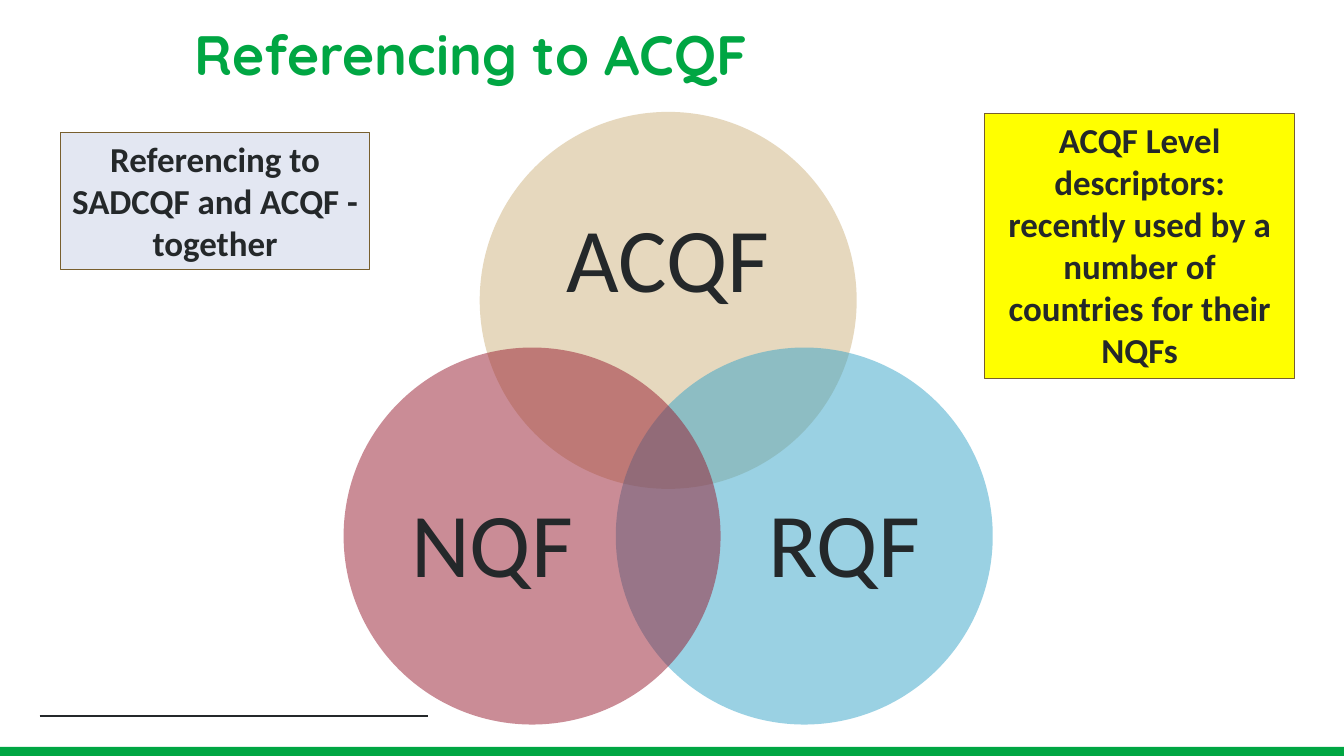
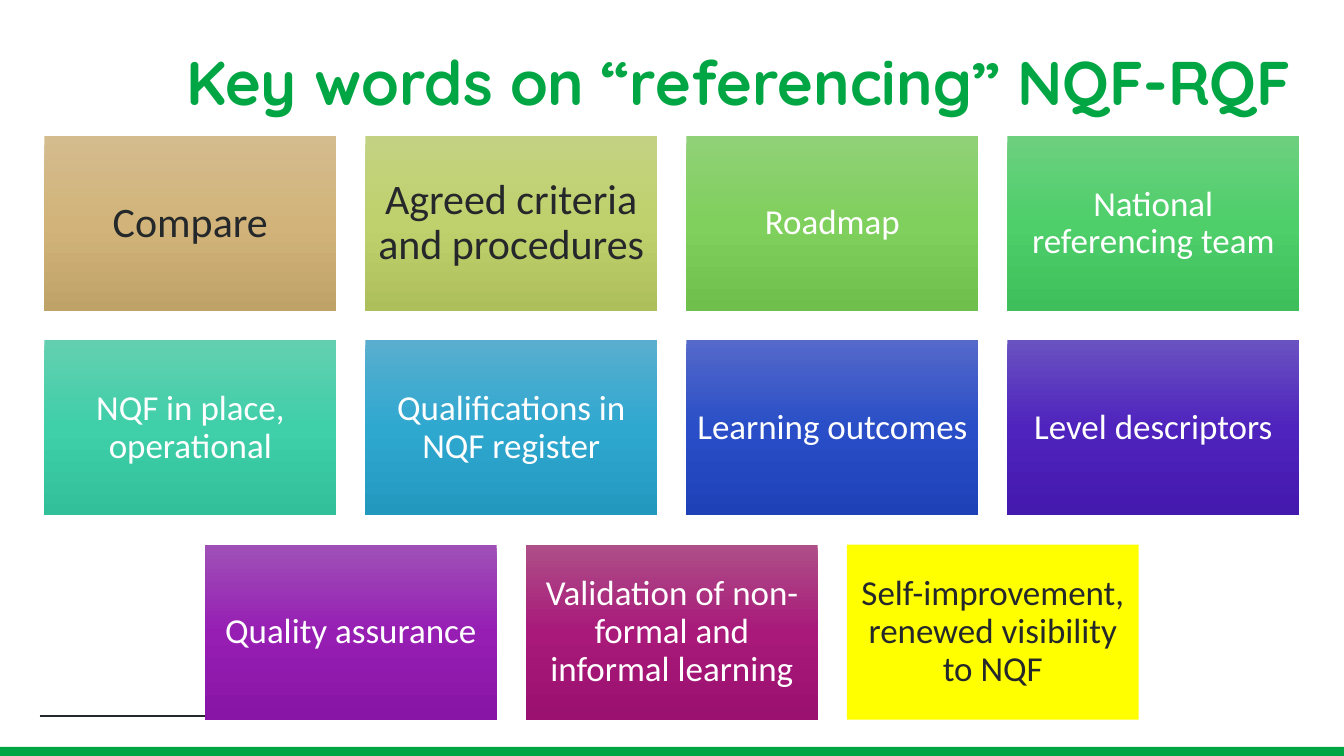
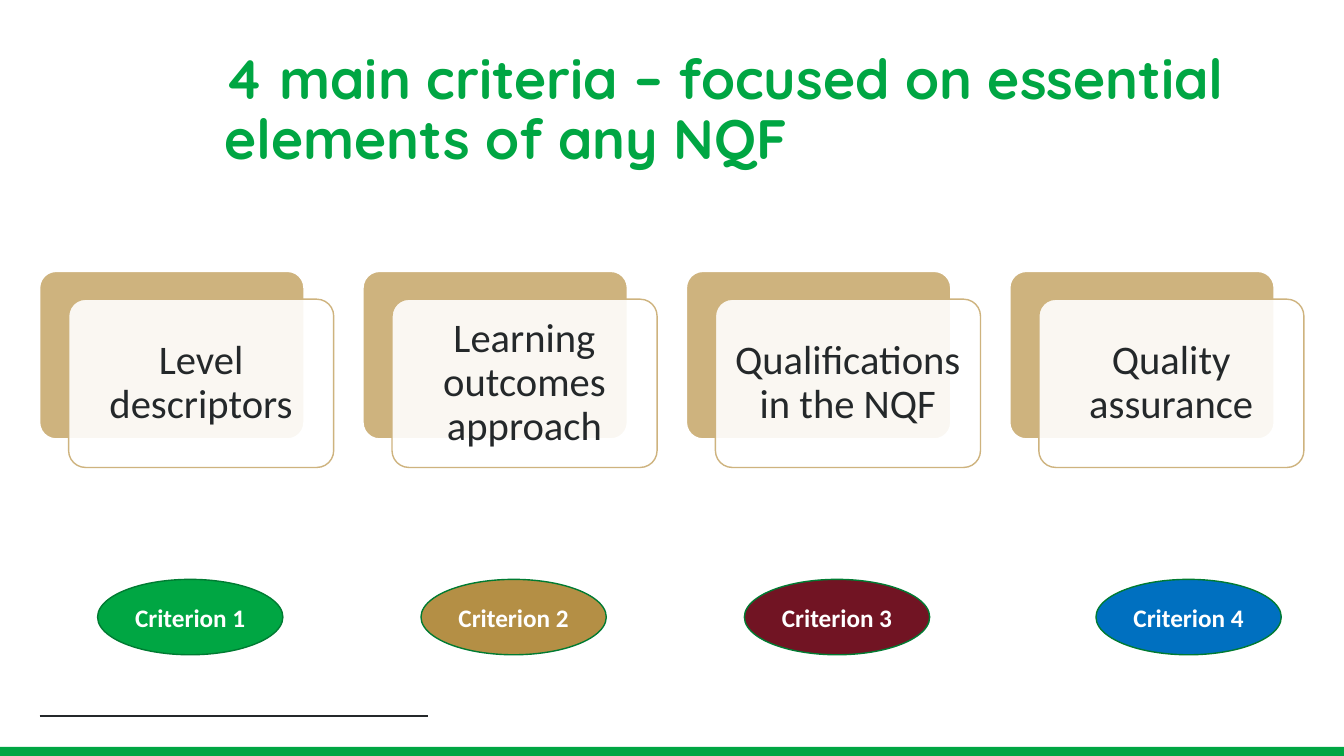
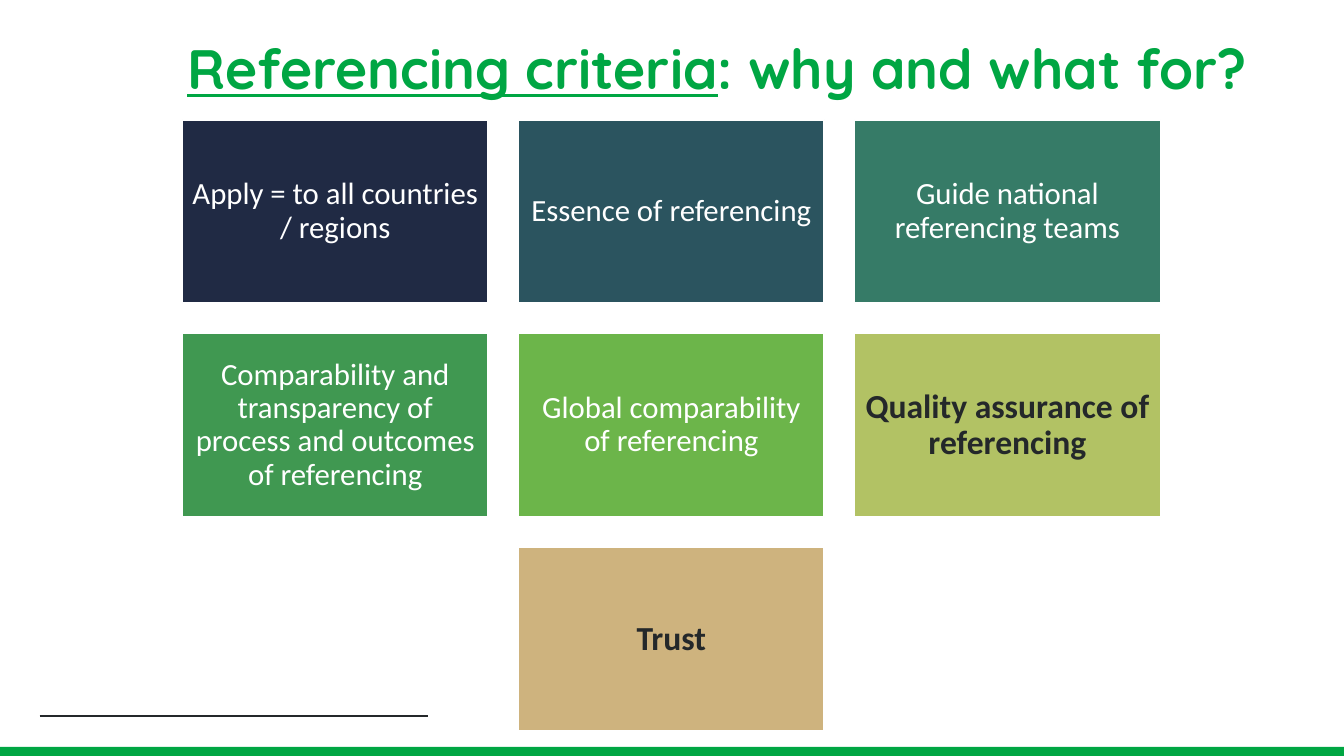
"""Build four slides on referencing qualifications frameworks."""
from copy import deepcopy
from dataclasses import dataclass

from lxml import etree
from pptx import Presentation
from pptx import util as u
from pptx.dml.color import RGBColor
from pptx.enum import shapes, text
from pptx.oxml import ns

WIDTH, HEIGHT = 33.87, 19.05
BODY_FONT, TITLE_FONT = "Calibri", "Quicksand"

COLOURS = {
    "green": "00A643", "dark green": "007B32", "ink": "24282A", "white": "FFFFFF",
    "sand": "CEB37E", "sky": "36A4C9", "wine": "971B2F", "yellow": "FFFF00",
    "mist": "E3E7F2", "brown": "785F2E", "ochre": "B48F45", "claret": "711423",
    "blue": "0070C0", "navy": "202A44", "petrol": "2B545F", "teal": "367B67",
    "fern": "409851", "leaf": "6CB54A", "olive": "B2C264",
}

GRADIENTS = {
    "tan": ("D4BC8E", "D2B47A", "BFA268"),
    "lime": ("C3D282", "BFD16C", "ADBF5A"),
    "grass": ("90D177", "80D05D", "6FBF4D"),
    "emerald": ("6CD07F", "4ECF6A", "3FBF5B"),
    "mint": ("62D0B0", "3FCFA9", "31C099"),
    "azure": ("59AECF", "2FA8D0", "2398BF"),
    "royal": ("5569CA", "294EC7", "1E41B7"),
    "indigo": ("6952C1", "4F23BD", "4419AE"),
    "purple": ("9F50B7", "961EB3", "8815A5"),
    "magenta": ("AE4F88", "A8197A", "9B116F"),
}


@dataclass
class Tile:
    """One labelled rectangle of a grid."""
    label: str
    fill: str
    size: int
    ink: str = "white"
    bold: bool = False


def rgb(name):
    """Look up a named colour."""
    return RGBColor.from_string(COLOURS[name])


def lengths(*values):
    """Turn centimetres into slide lengths."""
    return [u.Cm(value) for value in values]


def fill_gradient(shape, stops):
    """Fill a shape from top to bottom with evenly spaced colours."""
    shape.fill.gradient()
    shape.fill.gradient_angle = 270
    stop_list = shape._element.spPr.find(".//" + ns.qn("a:gsLst"))
    while len(stop_list) < len(stops):
        stop_list.append(deepcopy(stop_list[-1]))
    for index, (stop, colour) in enumerate(zip(shape.fill.gradient_stops, stops)):
        stop.position = index / (len(stops) - 1)
        stop.color.rgb = RGBColor.from_string(colour)


def add_figure(page, kind, box, fill, line=None, weight=1, opacity=100):
    """Draw a preset shape with its fill and outline."""
    figure = page.shapes.add_shape(kind, *lengths(*box))
    figure.shadow.inherit = False
    if fill in GRADIENTS:
        fill_gradient(figure, GRADIENTS[fill])
    else:
        figure.fill.solid()
        figure.fill.fore_color.rgb = rgb(fill)
    if opacity < 100:
        colour = figure._element.spPr.find(".//" + ns.qn("a:srgbClr"))
        etree.SubElement(colour, ns.qn("a:alpha"), val=str(opacity * 1000))
    if line:
        figure.line.color.rgb = rgb(line)
        figure.line.width = u.Pt(weight)
    else:
        figure.line.fill.background()
    return figure


def write(shape, words, size, ink="ink", bold=False, spacing=0.9, margin=None,
          anchor=text.MSO_ANCHOR.MIDDLE, align=text.PP_ALIGN.CENTER, font=BODY_FONT):
    """Set one paragraph in a shape and return it."""
    frame = shape.text_frame
    frame.word_wrap = True
    frame.vertical_anchor = anchor
    if margin is not None:
        frame.margin_left = frame.margin_right = u.Cm(margin)
        frame.margin_top = frame.margin_bottom = u.Cm(margin)
    frame.text = words
    para = frame.paragraphs[0]
    para.alignment = align
    para.line_spacing = spacing
    style_span(para.runs[0], size, ink, bold, font)
    return para


def style_span(span, size, ink, bold, font):
    """Format one run."""
    span.font.name = font
    span.font.size = u.Pt(size)
    span.font.bold = bold
    span.font.color.rgb = rgb(ink)


def add_page(deck):
    """Add a blank page with the footer rule and band."""
    page = deck.slides.add_slide(deck.slide_layouts[6])
    band_top = 18.82
    add_figure(page, shapes.MSO_SHAPE.RECTANGLE,
               (0, band_top, WIDTH, HEIGHT - band_top), "green")
    rule = page.shapes.add_connector(shapes.MSO_CONNECTOR.STRAIGHT,
                                     *lengths(1, 18.05, 10.78, 18.05))
    rule.line.color.rgb = rgb("ink")
    rule.line.width = u.Pt(1.5)
    etree.SubElement(rule._element.spPr, ns.qn("a:effectLst"))
    return page


def add_title(page, box, words, size=39.6, rest=""):
    """Write the title; with a rest, the words before it are underlined."""
    holder = page.shapes.add_textbox(*lengths(*box))
    para = write(holder, words, size, "green", True,
                 align=text.PP_ALIGN.LEFT, font=TITLE_FONT)
    if rest:
        para.runs[0].font.underline = True
        span = para.add_run()
        span.text = rest
        style_span(span, size, "green", True, TITLE_FONT)


def add_venn(page, left, top, diameter):
    """Draw three overlapping circles, each with its label area."""
    step, drop = 0.361 * diameter, 0.625 * diameter
    upper, right, lower = (0.133, 0.175, 0.733, 0.45), (0.306, 0.258, 0.6, 0.55), \
        (0.094, 0.258, 0.6, 0.55)
    circles = (("ACQF", "sand", step, 0, upper),
               ("RQF", "sky", 2 * step, drop, right),
               ("NQF", "wine", 0, drop, lower))
    for label, fill, across, down, area in circles:
        x, y = left + across, top + down
        add_figure(page, shapes.MSO_SHAPE.OVAL, (x, y, diameter, diameter), fill, opacity=50)
        dx, dy, width, height = (part * diameter for part in area)
        holder = page.shapes.add_textbox(*lengths(x + dx, y + dy, width, height))
        write(holder, label, 65, margin=0)


def add_callout(page, box, words, fill):
    """Draw a bordered note."""
    note = add_figure(page, shapes.MSO_SHAPE.RECTANGLE, box, fill, "brown", 0.75)
    write(note, words, 25, bold=True, spacing=1, anchor=text.MSO_ANCHOR.TOP)


def add_tile_grid(page, left, top, width, columns, tiles, line=None):
    """Lay tiles out in rows, centring a row that is not full."""
    tile_width = width / (columns + 0.1 * (columns - 1))
    tile_height, gap = 0.6 * tile_width, 0.1 * tile_width
    for start in range(0, len(tiles), columns):
        row = tiles[start:start + columns]
        indent = (columns - len(row)) * (tile_width + gap) / 2
        y = top + start // columns * (tile_height + gap)
        for column, tile in enumerate(row):
            x = left + indent + column * (tile_width + gap)
            figure = add_figure(page, shapes.MSO_SHAPE.RECTANGLE,
                                (x, y, tile_width, tile_height), tile.fill, line)
            write(figure, tile.label, tile.size, tile.ink, tile.bold, margin=tile.size / 100)


def add_card(page, left, top, label):
    """Draw a sand card with a translucent labelled card in front."""
    width, height = 6.68, 4.24
    kind = shapes.MSO_SHAPE.ROUNDED_RECTANGLE
    back = add_figure(page, kind, (left, top, width, height), "sand", "white", 1.5)
    front = add_figure(page, kind, (left + 0.74, top + 0.71, width, height),
                       "white", "sand", opacity=90)
    for card in (back, front):
        card.adjustments[0] = 0.1
    write(front, label, 29, margin=0.29)


def add_criteria(page, left, top, pitch):
    """Place the criteria cards in a row above their numbered ovals."""
    criteria = (("Level descriptors", "green", 1.47),
                ("Learning outcomes approach", "ochre", 1.47),
                ("Qualifications in the NQF", "claret", 1.47),
                ("Quality assurance", "blue", 2.18))
    for index, (label, fill, indent) in enumerate(criteria):
        x = left + index * pitch
        add_card(page, x, top, label)
        oval = add_figure(page, shapes.MSO_SHAPE.OVAL, (x + indent, top + 7.77, 4.67, 1.9),
                          fill, "dark green")
        write(oval, f"Criterion {index + 1}", 18, "white", True, spacing=1, margin=0)


def build_overview(deck):
    """Show how the three frameworks overlap."""
    page = add_page(deck)
    add_title(page, (4.65, 0.61, 28.73, 1.68), "Referencing to ACQF")
    add_venn(page, 8.66, 2.82, 9.5)
    add_callout(page, (24.82, 2.87, 7.8, 6.68), "ACQF Level descriptors: recently used "
                "by a number of countries for their NQFs", "yellow")
    add_callout(page, (1.52, 3.35, 7.8, 3.45),
                "Referencing to SADCQF and ACQF - together", "mist")


def build_key_words(deck):
    """Show the key words of referencing."""
    page = add_page(deck)
    add_title(page, (4.45, 0.91, 29.16, 2.51), "Key words on “referencing” NQF-RQF", 44)
    add_tile_grid(page, 1.12, 3.43, 31.62, 4, [
        Tile("Compare", "tan", 30, "ink"),
        Tile("Agreed criteria and procedures", "lime", 30, "ink"),
        Tile("Roadmap", "grass", 25),
        Tile("National referencing team", "emerald", 25),
        Tile("NQF in place, operational", "mint", 25),
        Tile("Qualifications in NQF register", "azure", 25),
        Tile("Learning outcomes", "royal", 25),
        Tile("Level descriptors", "indigo", 25),
        Tile("Quality assurance", "purple", 25),
        Tile("Validation of non-formal and informal learning", "magenta", 25),
        Tile("Self-improvement, renewed visibility to NQF", "yellow", 25, "ink"),
    ])


def build_criteria(deck):
    """Show the four main criteria."""
    page = add_page(deck)
    add_title(page, (5.41, 2.06, 27.43, 1.52),
              "4 main criteria – focused on essential elements of any NQF")
    add_criteria(page, 0.99, 6.83, 8.15)


def build_purpose(deck):
    """Show what the referencing criteria are for."""
    page = add_page(deck)
    add_title(page, (4.47, 0.61, 29.08, 2.41), "Referencing criteria",
              rest=": why and what for?")
    add_tile_grid(page, 4.6, 3.02, 24.64, 3, [
        Tile("Apply = to all countries / regions", "navy", 22),
        Tile("Essence of referencing", "petrol", 22),
        Tile("Guide national referencing teams", "teal", 22),
        Tile("Comparability and transparency of process and outcomes of referencing",
             "fern", 22),
        Tile("Global comparability of referencing", "leaf", 22),
        Tile("Quality assurance of referencing", "olive", 24, "ink", True),
        Tile("Trust", "sand", 24, "ink", True),
    ], "white")


def main():
    """Build and save the deck."""
    deck = Presentation()
    deck.slide_width, deck.slide_height = lengths(WIDTH, HEIGHT)
    for build in (build_overview, build_key_words, build_criteria, build_purpose):
        build(deck)
    deck.save("out.pptx")


if __name__ == "__main__":
    main()
